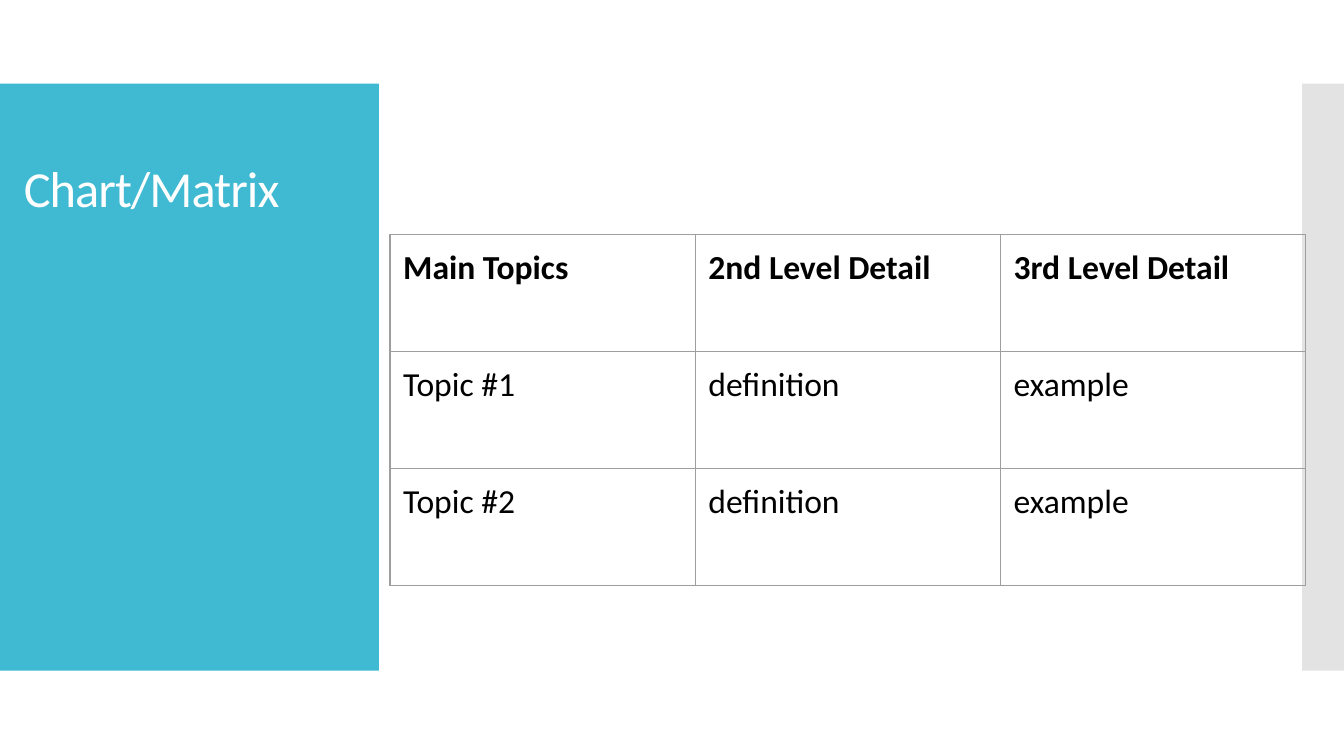
from pptx import Presentation
from pptx.dml.color import RGBColor as RGB
from pptx.enum.shapes import MSO_SHAPE as Shape
from pptx.enum.text import MSO_ANCHOR as Anchor
from pptx.oxml import parse_xml
from pptx.oxml.ns import nsdecls, qn
from pptx.util import Cm, Pt
from lxml.etree import SubElement

COLORS = {
    "teal": "40BAD2",
    "gray": "C8C8C8",
    "white": "FFFFFF",
    "black": "000000",
    "border": "9E9E9E",
}
FONT = "Calibri"
PAD = Cm(0.25)

deck = Presentation()
deck.slide_width, deck.slide_height = Cm(25.4), Cm(14.29)
slide = deck.slides.add_slide(deck.slide_layouts[6])


def style(par, size, color, bold=False):
    font = par.font
    font.name, font.size, font.bold = FONT, Pt(size), bold
    font.color.rgb = RGB.from_string(COLORS[color])


# Side panels
for left, width, color in [(0, 7.16, "teal"), (24.61, 0.79, "gray")]:
    panel = slide.shapes.add_shape(
        Shape.RECTANGLE, Cm(left), Cm(1.58), Cm(width), Cm(11.1))
    panel.shadow.inherit = False
    panel.fill.solid()
    panel.fill.fore_color.rgb = RGB.from_string(COLORS[color])
    panel.line.fill.background()

# The gray panel is half transparent
tint = panel.fill._xPr.find(".//" + qn("a:srgbClr"))
SubElement(tint, qn("a:alpha"), val="50000")

# Title
title = slide.shapes.add_textbox(Cm(0.2), Cm(2.84), Cm(23.67), Cm(1.6))
frame = title.text_frame
frame.word_wrap = True
frame.vertical_anchor = Anchor.TOP
frame.margin_left = frame.margin_right = PAD
frame.margin_top = frame.margin_bottom = PAD
par = frame.paragraphs[0]
par.text = "Chart/Matrix"
par.line_spacing = 0.9
style(par, 27, "white")
par.runs[0].font._element.set("spc", "-50")

# Topic table
ROWS = [
    ["Main Topics", "2nd Level Detail", "3rd Level Detail"],
    ["Topic #1", "definition", "example"],
    ["Topic #2", "definition", "example"],
]
table = slide.shapes.add_table(
    3, 3, Cm(7.37), Cm(4.43), Cm(17.3), Cm(6.63)).table
for col in table.columns:
    col.width = Cm(5.77)
for row in table.rows:
    row.height = Cm(2.21)

for r, texts in enumerate(ROWS):
    for c, text in enumerate(texts):
        cell = table.cell(r, c)
        cell.margin_left = cell.margin_right = PAD
        cell.margin_top = cell.margin_bottom = PAD
        cell.fill.background()
        par = cell.text_frame.paragraphs[0]
        par.text = text
        style(par, 18, "black", bold=r == 0)
        # Borders come before the fill in the cell properties
        props = cell._tc.get_or_add_tcPr()
        for i, side in enumerate("LRTB"):
            props.insert(i, parse_xml(
                f'<a:ln{side} {nsdecls("a")} w="{Pt(0.75)}"><a:solidFill>'
                f'<a:srgbClr val="{COLORS["border"]}"/>'
                f'</a:solidFill></a:ln{side}>'))

deck.save("out.pptx")
